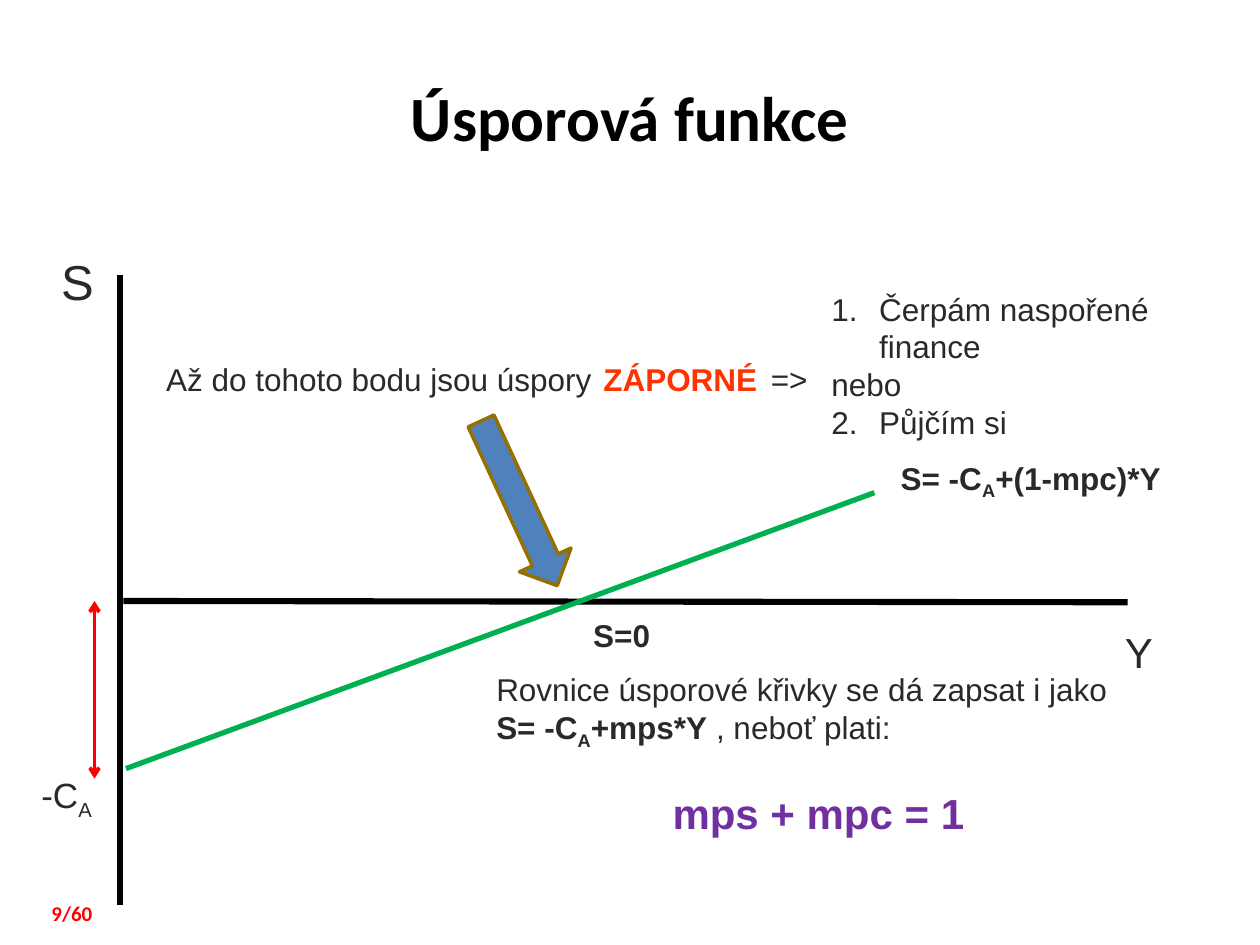
"""Build the savings function slide: axes, savings line, labels and explanation."""
import pptx
import pptx.dml.color
import pptx.enum.shapes
import pptx.enum.text
import pptx.oxml.ns
import pptx.util
from lxml import etree
from pptx.util import Inches

COLORS = {
    "black": "000000", "text": "292929", "green": "00B050", "red": "FF0000",
    "orange": "FF3300", "purple": "7030A0", "blue": "4F81BD", "brown": "956F00",
}
ALIGN = pptx.enum.text.PP_ALIGN
BODY = {"name": "Arial", "size": 18, "color": "text", "bold": False}
BOLD = {"bold": True}
SUBSCRIPT = {"baseline": -25000}

LINES = [
    ((0.95, 2.18), (0.95, 7.18), "black", 3.5, False),
    ((0.98, 4.77), (8.95, 4.78), "black", 3.5, False),
    ((1, 6.1), (6.94, 3.91), "green", 3, False),
    ((0.75, 4.77), (0.75, 6.18), "red", 2, True),
]
ARROW = {"box": (3.4, 3.77, 1.44, 0.45), "rotation": 65.2}

LABELS = [
    ((0.5, 0.3, 9, 1.25), {"name": "Calibri", "size": 36, "color": "black", "bold": True},
     [{"runs": [("Úsporová funkce", {})], "alignment": ALIGN.CENTER}]),
    ((8.83, 4.92, 0.86, 0.51), {"size": 24}, [{"runs": [("Y", {})]}]),
    ((0.39, 1.95, 0.94, 0.57), {"size": 28}, [{"runs": [("S", {})]}]),
    ((7.05, 3.59, 2.9, 0.7), BOLD,
     [{"runs": [("S= -C", {}), ("A", SUBSCRIPT), ("+(1-mpc)*Y", {})]}]),
    ((0.23, 6.09, 0.7, 0.44), {"size": 20}, [{"runs": [("-C", {}), ("A", SUBSCRIPT)]}]),
    ((1.22, 2.81, 3.59, 0.4), {}, [{"runs": [("Až do tohoto bodu jsou úspory", {})]}]),
    ((4.61, 4.84, 0.7, 0.4), BOLD, [{"runs": [("S=0", {})]}]),
    ((3.84, 5.27, 5.31, 1.72), {}, [
        {"runs": [("Rovnice úsporové křivky se dá zapsat i jako ", {}), ("S= -C", BOLD),
                  ("A", BOLD | SUBSCRIPT), ("+mps*Y", BOLD), (" , neboť plati:", {})]},
        {"runs": [("mps + mpc = 1", {"size": 24, "color": "purple", "bold": True})],
         "alignment": ALIGN.CENTER, "space_before": pptx.util.Pt(21)},
    ]),
    ((4.69, 2.81, 1.49, 0.4), {"color": "orange", "bold": True}, [{"runs": [("ZÁPORNÉ", {})]}]),
    ((6.02, 2.81, 0.63, 0.4), {}, [{"runs": [("=>", {})]}]),
    ((6.5, 2.25, 3.07, 1.3), {}, [
        {"runs": [("Čerpám naspořené finance", {})], "indent": 0.38, "number": 1},
        {"runs": [("nebo", {})], "indent": 0.38},
        {"runs": [("Půjčím si", {})], "indent": 0.38, "number": 2},
    ]),
    ((0.31, 7.1, 0.92, 0.3), {"name": "Calibri", "size": 12, "color": "red", "bold": True},
     [{"runs": [("9/60", {})]}]),
]


def rgb(name):
    """Return the named colour."""
    return pptx.dml.color.RGBColor.from_string(COLORS[name])


def add_element(parent, tag, **attributes):
    """Append a drawing element with the given attributes."""
    return etree.SubElement(parent, pptx.oxml.ns.qn(tag), attributes)


def style_line(line, color, width):
    """Set the colour and width of a line."""
    line.color.rgb = rgb(color)
    line.width = pptx.util.Pt(width)


def add_line(slide, start, end, color, width, arrowheads):
    """Draw a straight line, with arrowheads at both ends if asked."""
    connector = slide.shapes.add_connector(
        pptx.enum.shapes.MSO_CONNECTOR.STRAIGHT, *map(Inches, start + end))
    style_line(connector.line, color, width)
    if arrowheads:
        for tag in ("a:headEnd", "a:tailEnd"):
            add_element(connector.line._get_or_add_ln(), tag, type="arrow")
    add_element(connector._element.spPr, "a:effectLst")


def add_run(paragraph, text, style):
    """Add a run of text in the given style."""
    run = paragraph.add_run()
    run.text = text
    values = {"name": style["name"], "size": pptx.util.Pt(style["size"]), "bold": style["bold"]}
    for attribute, value in values.items():
        setattr(run.font, attribute, value)
    run.font.color.rgb = rgb(style["color"])
    if "baseline" in style:
        run._r.get_or_add_rPr().set("baseline", str(style["baseline"]))


def fill_paragraph(paragraph, content, style):
    """Write one paragraph with its layout, numbering and runs."""
    for attribute in ("alignment", "space_before"):
        if attribute in content:
            setattr(paragraph, attribute, content[attribute])
    if "indent" in content:
        properties = paragraph._p.get_or_add_pPr()
        indent = Inches(content["indent"])
        properties.set("marL", str(indent))
        properties.set("indent", str(-indent))
        if "number" in content:
            add_element(properties, "a:buFont", typeface="+mj-lt")
            add_element(properties, "a:buAutoNum", type="arabicPeriod",
                        startAt=str(content["number"]))
        else:
            add_element(properties, "a:buNone")
    for text, changes in content["runs"]:
        add_run(paragraph, text, style | changes)


def add_label(slide, box, style, paragraphs):
    """Add a text box holding the given paragraphs."""
    frame = slide.shapes.add_textbox(*map(Inches, box)).text_frame
    frame.word_wrap = True
    if style.get("size") == 36:
        frame.vertical_anchor = pptx.enum.text.MSO_ANCHOR.MIDDLE
    for index, content in enumerate(paragraphs):
        paragraph = frame.add_paragraph() if index else frame.paragraphs[0]
        fill_paragraph(paragraph, content, BODY | style)


def add_pointer(slide):
    """Add the block arrow pointing at the zero savings point."""
    shape = slide.shapes.add_shape(
        pptx.enum.shapes.MSO_SHAPE.RIGHT_ARROW, *map(Inches, ARROW["box"]))
    shape.rotation = ARROW["rotation"]
    shape.shadow.inherit = False
    shape.fill.solid()
    shape.fill.fore_color.rgb = rgb("blue")
    style_line(shape.line, "brown", 2)


def main():
    """Create and save the presentation."""
    presentation = pptx.Presentation()
    presentation.slide_width = Inches(10)
    presentation.slide_height = Inches(7.5)
    slide = presentation.slides.add_slide(presentation.slide_layouts[6])
    for line in LINES:
        add_line(slide, *line)
    add_pointer(slide)
    for label in LABELS:
        add_label(slide, *label)
    presentation.save("out.pptx")


if __name__ == "__main__":
    main()
